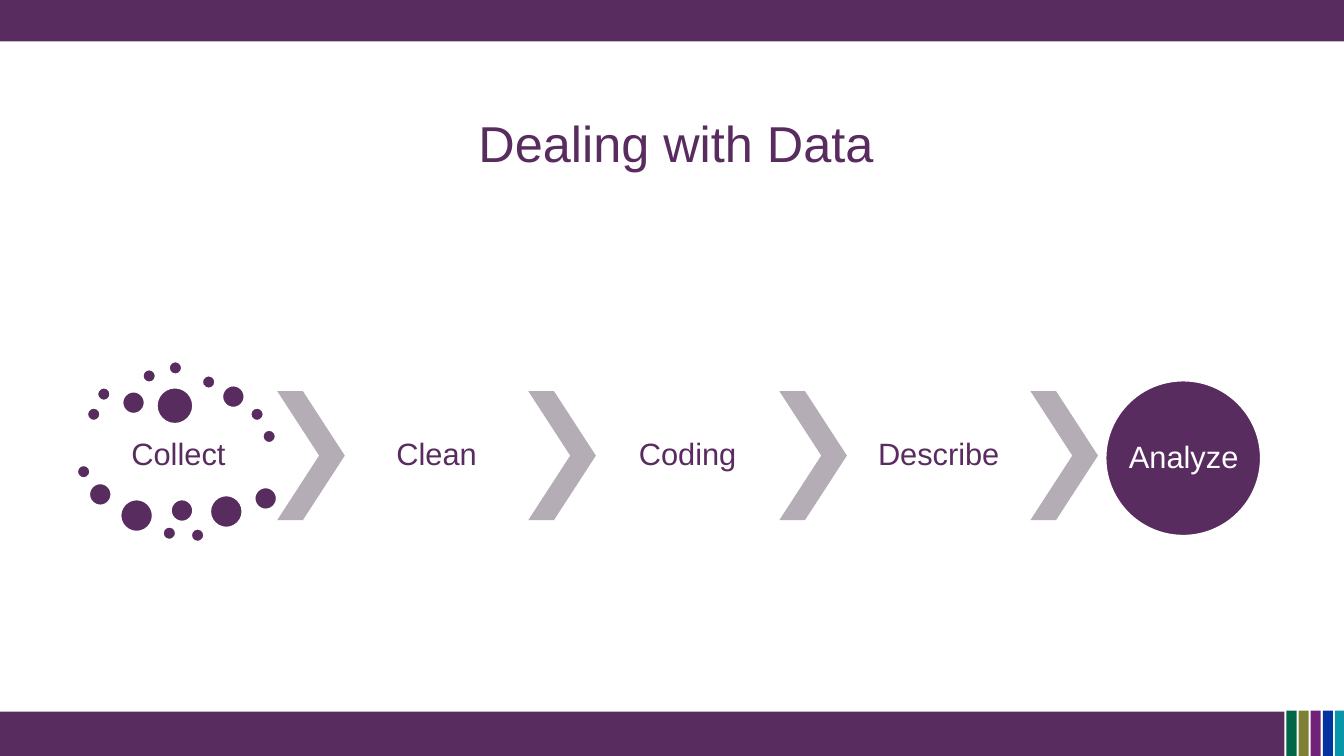
from dataclasses import dataclass

from pptx import Presentation
from pptx.dml.color import RGBColor
from pptx.enum.shapes import MSO_SHAPE as Preset
from pptx.enum.text import MSO_ANCHOR as Anchor, MSO_AUTO_SIZE as AutoSize, PP_ALIGN as Align
from pptx.shapes.autoshape import Shape
from pptx.slide import Slide
from pptx.text.text import TextFrame
from pptx.util import Inches, Pt

COLORS = {
    "purple": "592C5F",
    "chevron": "B5ADB6",
    "white": "FFFFFF",
    "green": "006647",
    "olive": "7E8034",
    "violet": "712177",
    "blue": "0033A0",
    "teal": "0996A9",
}
FONT = "Arial"


@dataclass(frozen=True)
class Box:
    left: float
    top: float
    width: float
    height: float

    def lengths(self) -> tuple[Inches, Inches, Inches, Inches]:
        return Inches(self.left), Inches(self.top), Inches(self.width), Inches(self.height)


@dataclass(frozen=True)
class Dot:
    left: float
    top: float
    size: float


SMALL, MEDIUM, LARGE, LARGEST = 0.14, 0.23, 0.33, 0.37
DOTS = [
    Dot(0.86, 4.04, SMALL),
    Dot(0.96, 3.84, SMALL),
    Dot(1.21, 3.88, MEDIUM),
    Dot(1.41, 3.66, SMALL),
    Dot(1.67, 3.58, SMALL),
    Dot(2.0, 3.72, SMALL),
    Dot(2.2, 3.82, MEDIUM),
    Dot(2.48, 4.04, SMALL),
    Dot(2.6, 4.26, SMALL),
    Dot(1.55, 3.84, LARGEST),
    Dot(0.76, 4.61, SMALL),
    Dot(0.88, 4.79, MEDIUM),
    Dot(1.19, 4.95, LARGE),
    Dot(1.61, 5.22, SMALL),
    Dot(1.69, 4.95, MEDIUM),
    Dot(1.89, 5.24, SMALL),
    Dot(2.08, 4.91, LARGE),
    Dot(2.52, 4.83, MEDIUM),
]

STRIPES = ["green", "olive", "violet", "blue", "teal"]
STRIPE_LEFT, STRIPE_PITCH = 12.76, 0.12

MIDDLE_STEPS = ["Clean", "Coding", "Describe"]
CHEVRON_LEFT, CHEVRON_WIDTH, LABEL_WIDTH = 2.75, 0.67, 1.82
STEP_TOP, STEP_HEIGHT = 3.88, 1.28
STEP_PITCH = CHEVRON_WIDTH + LABEL_WIDTH


def add_filled_shape(slide: Slide, preset: Preset, box: Box, color: str) -> Shape:
    shape = slide.shapes.add_shape(preset, *box.lengths())
    shape.shadow.inherit = False
    shape.fill.solid()
    shape.fill.fore_color.rgb = RGBColor.from_string(COLORS[color])
    shape.line.fill.background()
    return shape


def add_circle(slide: Slide, dot: Dot) -> None:
    """Draw a purple circle with a white outline."""
    circle = add_filled_shape(slide, Preset.OVAL, Box(dot.left, dot.top, dot.size, dot.size), "purple")
    circle.line.color.rgb = RGBColor.from_string(COLORS["white"])
    circle.line.width = Pt(2)


def add_chevron(slide: Slide, left: float) -> None:
    box = Box(left, STEP_TOP, CHEVRON_WIDTH, STEP_HEIGHT)
    chevron = add_filled_shape(slide, Preset.CHEVRON, box, "chevron")
    chevron.adjustments[0] = 0.62


def write_centered(frame: TextFrame, text: str, size: int, color: str) -> None:
    frame.word_wrap = True
    frame.auto_size = AutoSize.NONE
    frame.vertical_anchor = Anchor.MIDDLE
    paragraph = frame.paragraphs[0]
    paragraph.alignment = Align.CENTER
    run = paragraph.add_run()
    run.text = text
    run.font.name = FONT
    run.font.size = Pt(size)
    run.font.color.rgb = RGBColor.from_string(COLORS[color])


def add_label(slide: Slide, box: Box, text: str, color: str = "purple", inset: float = 0.03) -> None:
    frame = slide.shapes.add_textbox(*box.lengths()).text_frame
    frame.margin_left = frame.margin_right = Inches(inset)
    frame.margin_top = frame.margin_bottom = Inches(inset)
    write_centered(frame, text, 22, color)
    frame.paragraphs[0].line_spacing = 0.9


def add_bands(slide: Slide) -> None:
    """Draw the top and bottom bands and the coloured stripes in the corner."""
    add_filled_shape(slide, Preset.RECTANGLE, Box(0, 7.06, 12.74, 0.45), "purple")
    for index, color in enumerate(STRIPES):
        left = STRIPE_LEFT + index * STRIPE_PITCH
        add_filled_shape(slide, Preset.RECTANGLE, Box(left, 7.05, 0.1, 0.45), color)
    add_filled_shape(slide, Preset.RECTANGLE, Box(0, -0.01, 13.33, 0.42), "purple")


def add_title(slide: Slide, text: str) -> None:
    title = slide.shapes.title
    title.left, title.top, title.width, title.height = Box(0.6, 0.41, 12.21, 2).lengths()
    write_centered(title.text_frame, text, 36, "purple")


def add_process(slide: Slide) -> None:
    """Draw the steps from the scattered dots to the solid circle."""
    add_label(slide, Box(0.86, 4.22, LABEL_WIDTH, 0.6), "Collect")
    for dot in DOTS:
        add_circle(slide, dot)
    for index, step in enumerate(MIDDLE_STEPS):
        left = CHEVRON_LEFT + index * STEP_PITCH
        add_chevron(slide, left)
        add_label(slide, Box(left + CHEVRON_WIDTH, STEP_TOP, LABEL_WIDTH, STEP_HEIGHT), step)
    add_chevron(slide, CHEVRON_LEFT + len(MIDDLE_STEPS) * STEP_PITCH)
    add_circle(slide, Dot(10.96, 3.77, 1.55))
    add_label(slide, Box(11.19, 4, 1.1, 1.1), "Analyze", "white", inset=0)


def main() -> None:
    presentation = Presentation()
    presentation.slide_width = Inches(13.33)
    presentation.slide_height = Inches(7.5)
    title_only = presentation.slide_layouts.get_by_name("Title Only")
    slide = presentation.slides.add_slide(title_only)
    add_bands(slide)
    add_title(slide, "Dealing with Data")
    add_process(slide)
    presentation.save("out.pptx")


if __name__ == "__main__":
    main()
